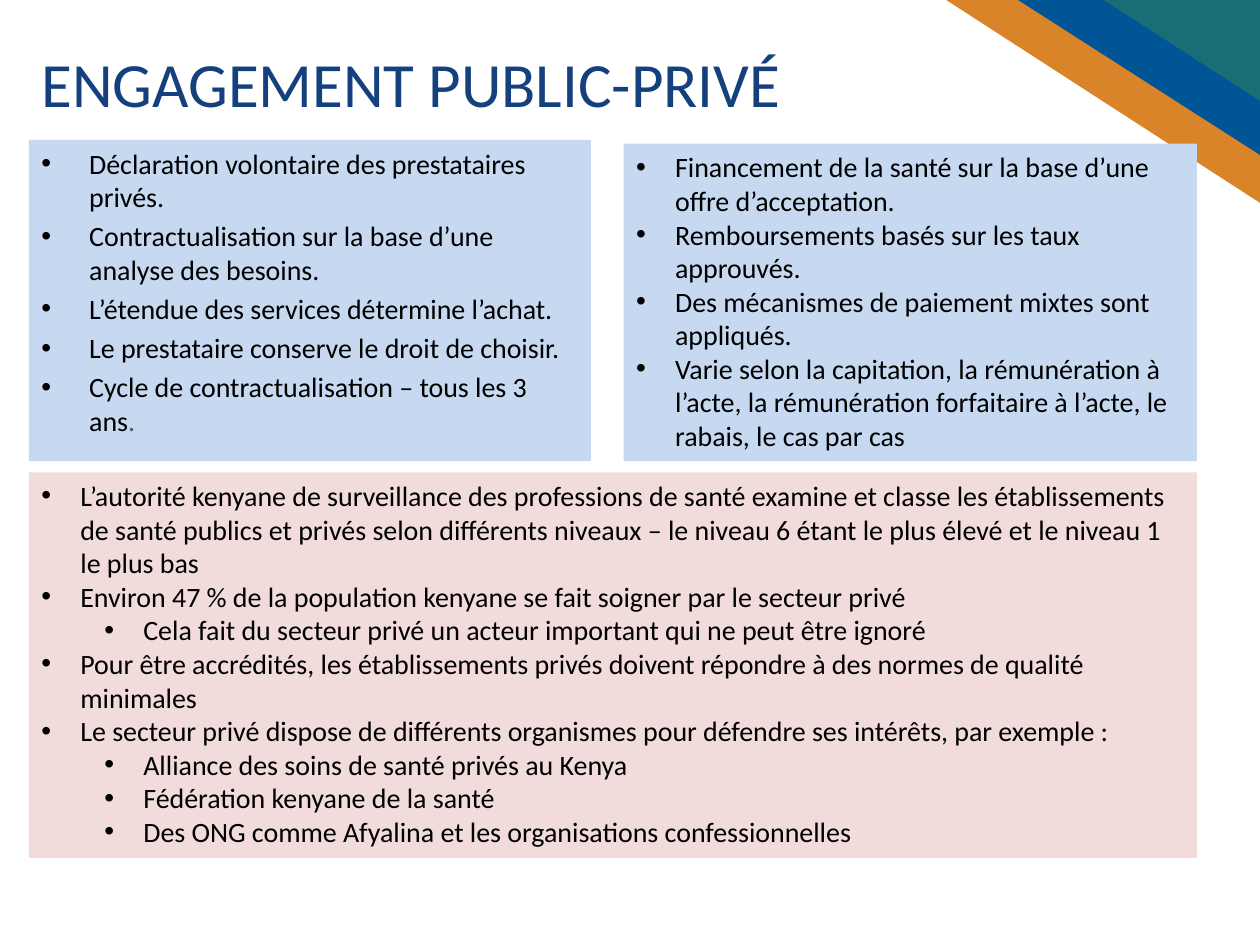
from lxml.etree import SubElement
from pptx import Presentation
from pptx.dml.color import RGBColor
from pptx.enum.shapes import MSO_SHAPE
from pptx.enum.text import MSO_ANCHOR, PP_ALIGN
from pptx.oxml.ns import qn
from pptx.util import Inches, Pt

COLORS = {
    "orange": "D98429",
    "blue": "005596",
    "teal": "1B6D75",
    "title": "14417E",
    "pale_blue": "C6D9F1",
    "pale_pink": "F2DCDB",
    "black": "000000",
    "gray": "595959",
}
FONT = "Calibri"
SLIDE_WIDTH = 10
LEFT, RIGHT = 0.23, 9.5
LEVEL_STEP = 0.5

# Corner triangles, back to front: width, height, color
CORNER = [(2.49, 1.61, "orange"), (1.92, 1.23, "blue"), (1.24, 0.8, "teal")]

# Bullets: level, text
CONTRACTING = [
    (0, "Déclaration volontaire des prestataires privés."),
    (0, "Contractualisation sur la base d’une analyse des besoins."),
    (0, "L’étendue des services détermine l’achat."),
    (0, "Le prestataire conserve le droit de choisir."),
    (0, "Cycle de contractualisation – tous les 3 ans"),
]
FINANCING = [
    (0, "Financement de la santé sur la base d’une offre d’acceptation."),
    (0, "Remboursements basés sur les taux approuvés."),
    (0, "Des mécanismes de paiement mixtes sont appliqués."),
    (0, "Varie selon la capitation, la rémunération à l’acte, la rémunération "
        "forfaitaire à l’acte, le rabais, le cas par cas"),
]
PRIVATE_SECTOR = [
    (0, "L’autorité kenyane de surveillance des professions de santé examine et "
        "classe les établissements de santé publics et privés selon différents "
        "niveaux – le niveau 6 étant le plus élevé et le niveau 1 le plus bas"),
    (0, "Environ 47 % de la population kenyane se fait soigner par le secteur privé"),
    (1, "Cela fait du secteur privé un acteur important qui ne peut être ignoré"),
    (0, "Pour être accrédités, les établissements privés doivent répondre à des "
        "normes de qualité minimales"),
    (0, "Le secteur privé dispose de différents organismes pour défendre ses "
        "intérêts, par exemple :"),
    (1, "Alliance des soins de santé privés au Kenya"),
    (1, "Fédération kenyane de la santé"),
    (1, "Des ONG comme Afyalina et les organisations confessionnelles"),
]


def color(name):
    return RGBColor.from_string(COLORS[name])


def add_filled_shape(page, kind, left, top, width, height, fill):
    shape = page.shapes.add_shape(
        kind, Inches(left), Inches(top), Inches(width), Inches(height))
    shape.shadow.inherit = False
    shape.fill.solid()
    shape.fill.fore_color.rgb = color(fill)
    shape.line.fill.background()
    return shape


def add_span(para, text, size=16, text_color="black"):
    span = para.add_run()
    span.text = text
    span.font.name = FONT
    span.font.size = Pt(size)
    span.font.color.rgb = color(text_color)


def add_bullet(para, level, hanging):
    para.level = level
    properties = para._p.get_or_add_pPr()
    properties.set("marL", str(Inches(hanging + level * LEVEL_STEP)))
    properties.set("indent", str(-Inches(hanging)))
    SubElement(properties, qn("a:buFont")).set("typeface", "Arial")
    SubElement(properties, qn("a:buChar")).set("char", "•")


def add_title(page, text):
    box = page.shapes.add_textbox(
        Inches(LEFT), Inches(0.18), Inches(8.27), Inches(1.02))
    frame = box.text_frame
    frame.word_wrap = True
    frame.vertical_anchor = MSO_ANCHOR.MIDDLE
    para = frame.paragraphs[0]
    para.line_spacing = 0.9
    add_span(para, text, size=36, text_color="title")


def add_bullet_panel(page, bullets, left, top, width, height, fill,
                     hanging=0.31, gap=0):
    panel = add_filled_shape(
        page, MSO_SHAPE.RECTANGLE, left, top, width, height, fill)
    frame = panel.text_frame
    frame.word_wrap = True
    frame.vertical_anchor = MSO_ANCHOR.TOP
    for index, (level, text) in enumerate(bullets):
        para = frame.add_paragraph() if index else frame.paragraphs[0]
        add_bullet(para, level, hanging)
        para.alignment = PP_ALIGN.LEFT
        if index and gap:
            para.space_before = Pt(gap)
        add_span(para, text)
    return panel


def main():
    deck = Presentation()
    deck.slide_width = Inches(SLIDE_WIDTH)
    deck.slide_height = Inches(7.5)
    page = deck.slides.add_slide(deck.slide_layouts[6])

    # Corner decoration
    for width, height, fill in CORNER:
        triangle = add_filled_shape(page, MSO_SHAPE.RIGHT_TRIANGLE,
                                    SLIDE_WIDTH - width, 0, width, height, fill)
        triangle.rotation = 180

    add_title(page, "ENGAGEMENT PUBLIC-PRIVÉ")

    # Upper panels
    contracting = add_bullet_panel(page, CONTRACTING, LEFT, 1.11, 4.46, 2.55,
                                   "pale_blue", hanging=0.38, gap=3.2)
    add_span(contracting.text_frame.paragraphs[-1], ".", text_color="gray")
    add_bullet_panel(page, FINANCING, 4.95, 1.14, RIGHT - 4.95, 2.52, "pale_blue")

    # Lower panel
    add_bullet_panel(page, PRIVATE_SECTOR, LEFT, 3.75, RIGHT - LEFT, 3.06, "pale_pink")

    deck.save("out.pptx")


if __name__ == "__main__":
    main()
